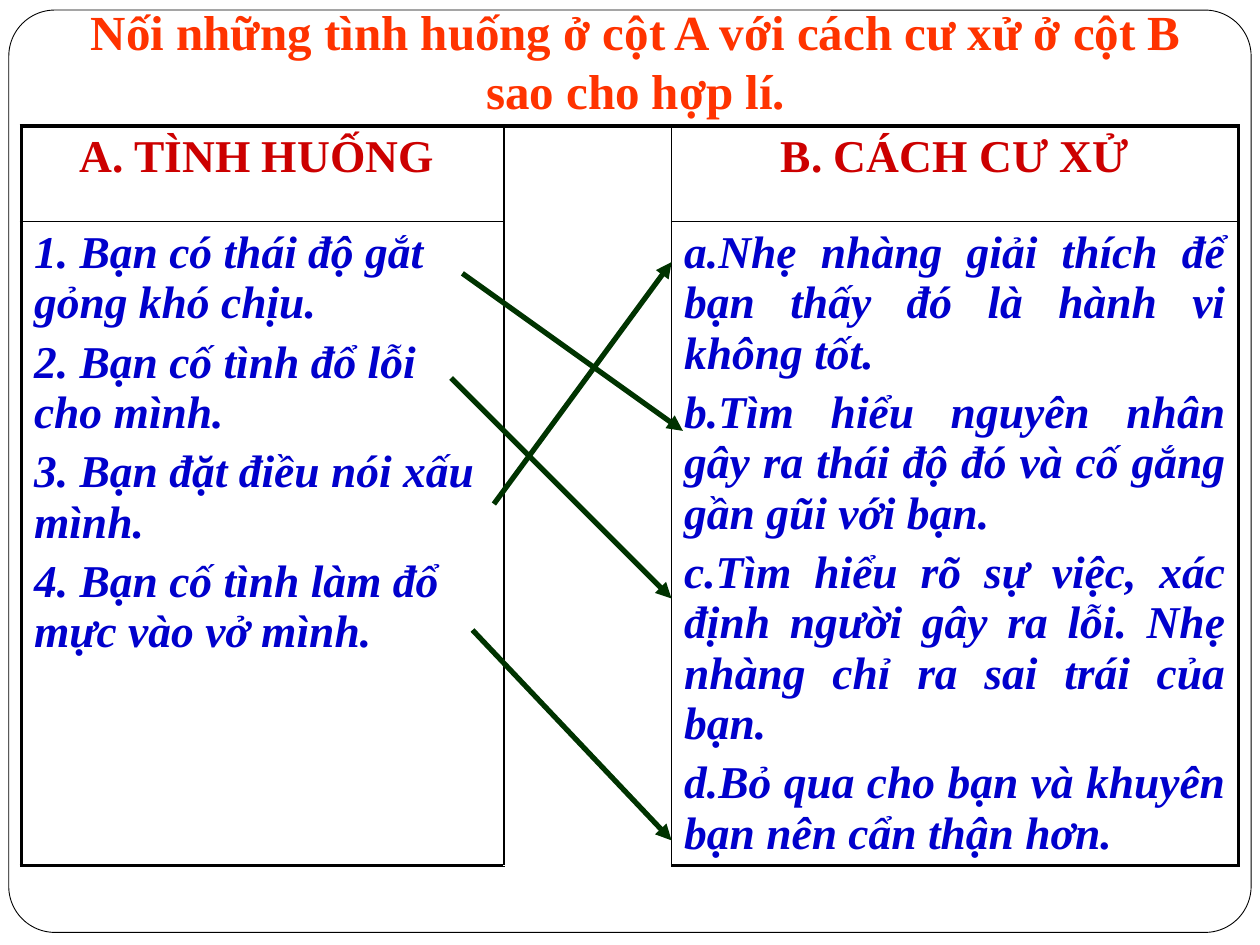
from pptx import Presentation
from pptx.dml.color import RGBColor
from pptx.enum.shapes import MSO_CONNECTOR as CONN, MSO_SHAPE as SHAPE
from pptx.enum.text import MSO_ANCHOR as ANCHOR, MSO_AUTO_SIZE as AUTO, PP_ALIGN as ALIGN
from pptx.oxml.ns import qn
from pptx.util import Inches, Pt
from lxml.etree import SubElement

BLACK = RGBColor(0x00, 0x00, 0x00)
WHITE = RGBColor(0xFF, 0xFF, 0xFF)
ORANGE = RGBColor(0xFF, 0x33, 0x00)
RED = RGBColor(0xCC, 0x00, 0x00)
BLUE = RGBColor(0x00, 0x00, 0xCC)
GREEN = RGBColor(0x00, 0x33, 0x00)

TITLE = "Nối những tình huống ở cột A với cách cư xử ở cột B sao cho hợp lí."
HEADERS = {0: "A. TÌNH HUỐNG ", 2: "B. CÁCH CƯ XỬ"}
SITUATIONS = [
    "1. Bạn có thái độ gắt gỏng khó chịu.",
    "2. Bạn cố tình đổ lỗi cho mình.",
    "3. Bạn đặt điều nói xấu mình.",
    "4. Bạn cố tình làm đổ mực vào vở mình.",
]
RESPONSES = [
    "a.Nhẹ nhàng giải thích để bạn thấy đó là hành vi không tốt.",
    "b.Tìm hiểu nguyên nhân gây ra thái độ đó và cố gắng gần gũi với bạn.",
    "c.Tìm hiểu rõ sự việc, xác định người gây ra lỗi. Nhẹ nhàng chỉ ra sai trái của bạn.",
    "d.Bỏ qua cho bạn và khuyên bạn nên cẩn thận hơn.",
]
MATCHES = [
    ((3.67, 2.17), (5.42, 3.42)),
    ((3.58, 3), (5.33, 4.75)),
    ((3.92, 4), (5.33, 2.08)),
    ((3.75, 5), (5.33, 6.67)),
]


class MatchingSlide:
    font_name = "Times New Roman"
    title_size = Pt(28)
    text_size = Pt(26)
    gap = Pt(5)
    outer, inner = Pt(2.25), Pt(1)

    def __init__(self, prs):
        self.s = prs.slides.add_slide(prs.slide_layouts[5])

    def style(self, font, size, color, italic=False):
        font.name, font.size, font.bold, font.italic = self.font_name, size, True, italic
        font.color.rgb = color

    def frame(self, x, y, w, h):
        sp = self.s.shapes.add_shape(SHAPE.ROUNDED_RECTANGLE, *map(Inches, (x, y, w, h)))
        sp.adjustments[0] = 0.05
        sp.shadow.inherit = False
        sp.fill.solid()
        sp.fill.fore_color.rgb = WHITE
        sp.line.color.rgb = BLACK
        sp.line.width = Pt(0.5)

    def title(self, text, x, y, w, h):
        sp = self.s.shapes.title
        self.s.shapes._spTree.append(sp._element)
        sp.left, sp.top, sp.width, sp.height = map(Inches, (x, y, w, h))
        tf = sp.text_frame
        tf.text = text
        tf.word_wrap = True
        tf.auto_size = AUTO.NONE
        tf.vertical_anchor = ANCHOR.BOTTOM
        tf.margin_left = tf.margin_right = tf.margin_bottom = Inches(0.1)
        tf.margin_top = Inches(0.05)
        p = tf.paragraphs[0]
        p.alignment = ALIGN.CENTER
        self.style(p.font, self.title_size, ORANGE)

    def table(self, x, y, cols, rows):
        size = Inches(sum(cols)), Inches(sum(rows))
        tbl = self.s.shapes.add_table(len(rows), len(cols), Inches(x), Inches(y), *size).table
        tbl.first_row = tbl.horz_banding = False
        for col, width in zip(tbl.columns, cols):
            col.width = Inches(width)
        for row, height in zip(tbl.rows, rows):
            row.height = Inches(height)
        last_row, last_col = len(rows) - 1, len(cols) - 1
        tbl.cell(0, 1).merge(tbl.cell(last_row, 1))
        for i in range(len(rows)):
            for j in range(len(cols)):
                edges = {"L": j == 0, "R": j == last_col, "T": i == 0, "B": i == last_row}
                cell = tbl.cell(i, j)
                for side, is_outer in edges.items():
                    if is_outer or j != 1 or side in "LR":
                        self.border(cell, side, self.outer if is_outer else self.inner)
                cell.fill.solid()
                cell.fill.fore_color.rgb = WHITE
        return tbl

    def border(self, cell, side, width):
        ln = SubElement(cell._tc.get_or_add_tcPr(), qn(f"a:ln{side}"), w=str(width))
        SubElement(SubElement(ln, qn("a:solidFill")), qn("a:srgbClr"), val=str(BLACK))

    def cell_text(self, cell, lines, align, color, italic=False):
        tf = cell.text_frame
        tf.text = "\n".join(lines)
        for p in tf.paragraphs:
            p.alignment = align
            p.space_before = self.gap
            self.style(p.font, self.text_size, color, italic)

    def arrow(self, start, end):
        line = self.s.shapes.add_connector(CONN.STRAIGHT, *map(Inches, start + end))
        line.line.color.rgb = GREEN
        line.line.width = Pt(3)
        SubElement(line.line._get_or_add_ln(), qn("a:tailEnd"), type="triangle")
        SubElement(line._element.spPr, qn("a:effectLst"))


def main():
    prs = Presentation()
    prs.slide_width, prs.slide_height = Inches(10), Inches(7.5)
    slide = MatchingSlide(prs)
    slide.frame(0.07, 0.08, 9.86, 7.32)
    slide.title(TITLE, 0.42, 0, 9.25, 1.05)
    tbl = slide.table(0.17, 1, cols=(3.83, 1.33, 4.5), rows=(0.76, 5.06))
    for col, text in HEADERS.items():
        slide.cell_text(tbl.cell(0, col), [text], ALIGN.CENTER, RED)
    slide.cell_text(tbl.cell(1, 0), SITUATIONS, ALIGN.LEFT, BLUE, italic=True)
    slide.cell_text(tbl.cell(1, 2), RESPONSES, ALIGN.JUSTIFY, BLUE, italic=True)
    for start, end in MATCHES:
        slide.arrow(start, end)
    prs.save("out.pptx")


if __name__ == "__main__":
    main()
